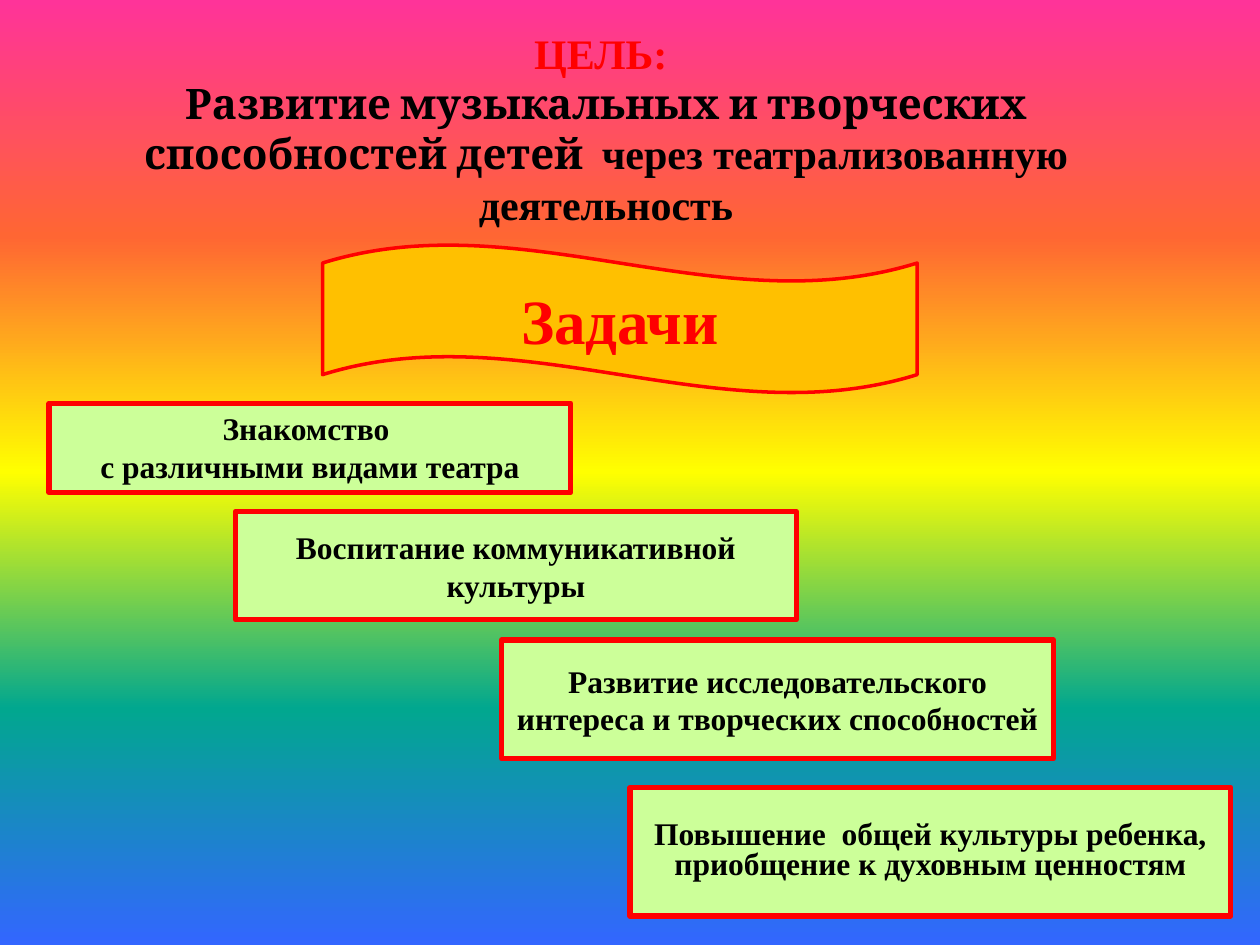
from lxml.etree import SubElement
from pptx import Presentation
from pptx.dml.color import RGBColor
from pptx.enum.shapes import MSO_SHAPE
from pptx.enum.text import MSO_ANCHOR, MSO_AUTO_SIZE, PP_ALIGN
from pptx.oxml.ns import qn
from pptx.util import Pt

RED = RGBColor(0xFF, 0x00, 0x00)
BLACK = RGBColor(0x00, 0x00, 0x00)
ORANGE = RGBColor(0xFF, 0xC0, 0x00)
LIGHT_GREEN = RGBColor(0xCC, 0xFF, 0x99)
RAINBOW = [
    RGBColor(0xFF, 0x33, 0x99),
    RGBColor(0xFF, 0x66, 0x33),
    RGBColor(0xFF, 0xFF, 0x00),
    RGBColor(0x01, 0xA7, 0x8F),
    RGBColor(0x33, 0x66, 0xFF),
]
SERIF = "Times New Roman"

TASKS = [
    ((28.1, 230.4, 298.1, 51.1), ["Знакомство ", "с различными видами театра"],
     MSO_ANCHOR.TOP, None),
    ((134.6, 292.3, 320.4, 61.9), ["Воспитание коммуникативной культуры"],
     MSO_ANCHOR.MIDDLE, None),
    ((286.6, 365.8, 315.4, 67.7),
     ["Развитие исследовательского интереса и творческих способностей"],
     MSO_ANCHOR.MIDDLE, None),
    ((360, 450, 343.4, 73.4),
     ["Повышение  общей культуры ребенка, приобщение к духовным ценностям"],
     MSO_ANCHOR.MIDDLE, 0.8),
]


def paint_background(slide):
    fill = slide.background.fill
    fill.gradient()
    fill.gradient_angle = 270
    stops = slide.background._cSld.find(".//" + qn("a:gsLst"))
    for stop in list(stops):
        stops.remove(stop)
    for index, color in enumerate(RAINBOW):
        position = index * 100000 // (len(RAINBOW) - 1)
        stop = SubElement(stops, qn("a:gs"), pos=str(position))
        SubElement(stop, qn("a:srgbClr"), val=str(color))


def style_paragraph(paragraph, size, color):
    paragraph.alignment = PP_ALIGN.CENTER
    paragraph.font.size = Pt(size)
    paragraph.font.bold = True
    paragraph.font.name = SERIF
    paragraph.font.color.rgb = color


def add_goal(slide, box):
    frame = slide.shapes.add_textbox(*map(Pt, box)).text_frame
    frame.word_wrap = True
    frame.auto_size = MSO_AUTO_SIZE.SHAPE_TO_FIT_TEXT
    frame.vertical_anchor = MSO_ANCHOR.MIDDLE
    heading = frame.paragraphs[0]
    heading.text = "ЦЕЛЬ: "
    style_paragraph(heading, 24, RED)
    goal = frame.add_paragraph()
    style_paragraph(goal, 24, BLACK)
    for text, font_name in [
        ("Развитие музыкальных и творческих способностей детей  ", "Cambria"),
        ("через театрализованную деятельность", SERIF),
    ]:
        run = goal.add_run()
        run.text = text
        run.font.name = font_name


def add_panel(slide, kind, box, fill_color, line_width, lines, size, color,
              anchor=MSO_ANCHOR.MIDDLE, spacing=None):
    shape = slide.shapes.add_shape(kind, *map(Pt, box))
    shape.shadow.inherit = False
    shape.fill.solid()
    shape.fill.fore_color.rgb = fill_color
    shape.line.color.rgb = RED
    shape.line.width = Pt(line_width)
    frame = shape.text_frame
    frame.word_wrap = True
    frame.vertical_anchor = anchor
    frame.text = "\n".join(lines)
    for paragraph in frame.paragraphs:
        style_paragraph(paragraph, size, color)
        paragraph.line_spacing = spacing


def add_tasks(slide):
    for box, lines, anchor, spacing in TASKS:
        add_panel(slide, MSO_SHAPE.RECTANGLE, box, LIGHT_GREEN, 3,
                  lines, 18, BLACK, anchor, spacing)


def main():
    presentation = Presentation()
    presentation.slide_width = Pt(720)
    presentation.slide_height = Pt(540)
    slide = presentation.slides.add_slide(presentation.slide_layouts[6])
    paint_background(slide)
    add_goal(slide, (39.6, 25.9, 613.4, 94.3))
    add_panel(slide, MSO_SHAPE.WAVE, (184.3, 139.7, 339.8, 85),
              ORANGE, 2, ["Задачи"], 36, RED)
    add_tasks(slide)
    presentation.save("out.pptx")


if __name__ == "__main__":
    main()
